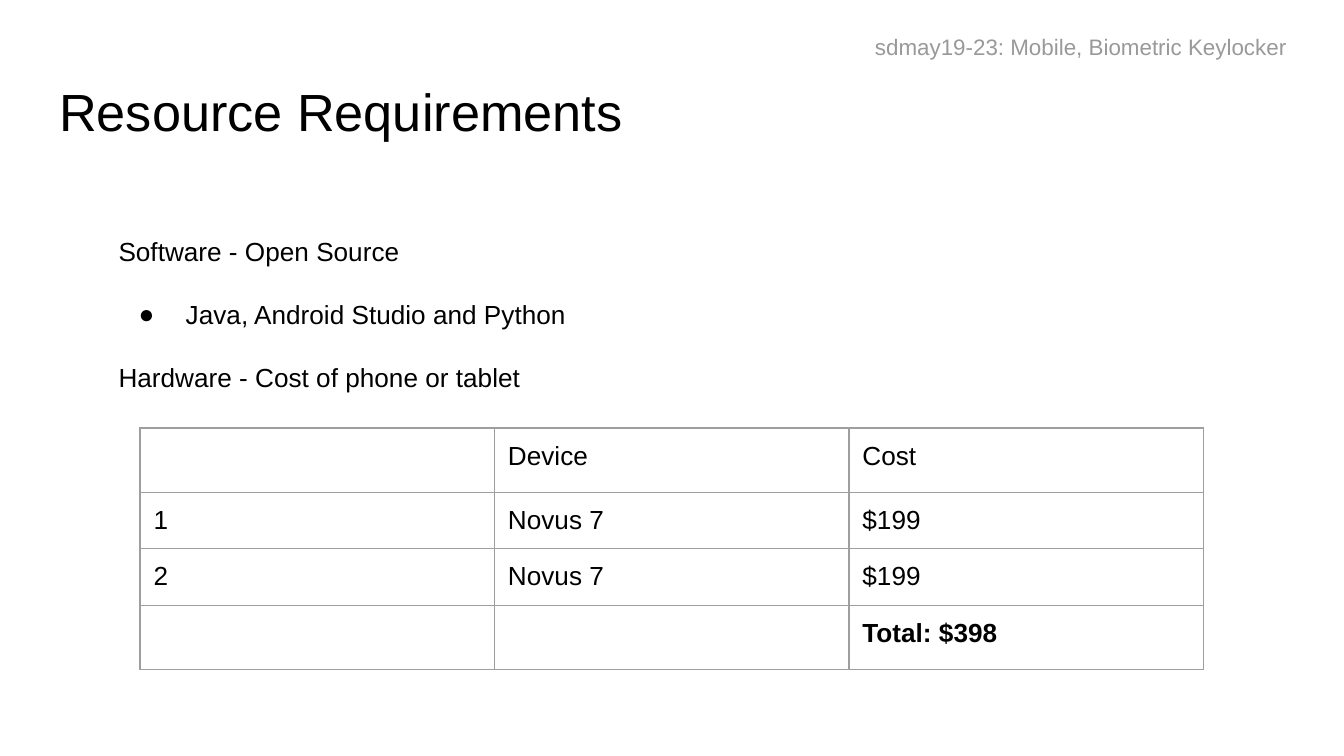
from lxml.etree import SubElement as Sub
from pptx import Presentation
from pptx.dml.color import RGBColor
from pptx.enum.text import MSO_ANCHOR as Anchor, MSO_AUTO_SIZE as Fit, PP_ALIGN as Align
from pptx.oxml.ns import qn
from pptx.util import Inches, Pt

WIDE = Inches(10)
HIGH = WIDE * 9 // 16
PAD = Inches(0.1)
INK, GREY, RULE = "000000", "999999", "9E9E9E"

LINES = [
    ("Software - Open Source", False),
    ("Java, Android Studio and Python", True),
    ("Hardware - Cost of phone or tablet", False),
]
COSTS = [
    ("", "Device", "Cost"),
    ("1", "Novus 7", "$199"),
    ("2", "Novus 7", "$199"),
    ("", "", "Total: $398"),
]
ROWS = [0.48, 0.42, 0.42, 0.48]


def color(code):
    return RGBColor.from_string(code)


def area(left, top, width, height):
    """Turn percentages of the slide into lengths."""
    return (int(WIDE * left / 100), int(HIGH * top / 100),
            int(WIDE * width / 100), int(HIGH * height / 100))


def place(shape, box):
    shape.left, shape.top, shape.width, shape.height = box


def style(para, size, code=INK, bold=False):
    para.alignment = Align.LEFT
    for font in [para.font] + [run.font for run in para.runs]:
        font.name, font.size, font.bold = "Arial", Pt(size), bold
        font.color.rgb = color(code)


def set_frame(frame, top=0.1):
    frame.word_wrap = True
    frame.auto_size = Fit.NONE
    frame.vertical_anchor = Anchor.TOP
    frame.margin_left = frame.margin_right = frame.margin_bottom = PAD
    frame.margin_top = Inches(top)


def set_bullet(para, on):
    props = para._p.get_or_add_pPr()
    props.set("marL", str(Inches(0.5 if on else 0)))
    props.set("indent", str(Inches(-0.35 if on else 0)))
    if on:
        tint = Sub(props, qn("a:buClr"))
        Sub(tint, qn("a:srgbClr"), val=INK)
        Sub(props, qn("a:buChar"), char="●")
    else:
        Sub(props, qn("a:buNone"))


def add_title(slide, box):
    title = slide.shapes.title
    place(title, box)
    set_frame(title.text_frame)
    title.text_frame.text = "Resource Requirements"
    style(title.text_frame.paragraphs[0], 28)


def add_header(slide, box):
    frame = slide.shapes.add_textbox(*box).text_frame
    set_frame(frame)
    frame.text = "sdmay19-23: Mobile, Biometric Keylocker"
    style(frame.paragraphs[0], 12, GREY)


def add_body(slide, box):
    body = slide.placeholders[1]
    place(body, box)
    frame = body.text_frame
    set_frame(frame, 0.33)
    frame.text = "\n".join(text for text, _ in LINES)
    for i, (para, (_, on)) in enumerate(zip(frame.paragraphs, LINES)):
        set_bullet(para, on)
        para.space_before = Pt(17 if i else 0)
        style(para, 14)


def add_rules(cell):
    props = cell._tc.get_or_add_tcPr()
    for side in ("lnL", "lnR", "lnT", "lnB"):
        line = Sub(props, qn("a:" + side), w=str(Pt(0.75)))
        fill = Sub(line, qn("a:solidFill"))
        Sub(fill, qn("a:srgbClr"), val=RULE)


def add_costs(slide, box):
    count = len(COSTS[0])
    table = slide.shapes.add_table(len(COSTS), count, *box).table
    table.first_row = table.horz_banding = False
    for col in table.columns:
        col.width = box[2] // count
    for row, share, texts in zip(table.rows, ROWS, COSTS):
        row.height = int(box[3] * share / sum(ROWS))
        for cell, text in zip(row.cells, texts):
            add_rules(cell)
            cell.fill.background()
            cell.margin_left = cell.margin_right = PAD
            cell.margin_top = cell.margin_bottom = PAD
            cell.text = text
            style(cell.text_frame.paragraphs[0], 14, bold=text.startswith("Total"))


def main():
    deck = Presentation()
    deck.slide_width, deck.slide_height = WIDE, HIGH
    slide = deck.slides.add_slide(deck.slide_layouts[1])
    add_title(slide, area(3.41, 8.65, 93.2, 11.2))
    add_body(slide, area(7.82, 25.25, 84.3, 59.2))
    add_header(slide, area(64.12, 2.67, 34.5, 7.64))
    add_costs(slide, area(10.42, 56.6, 79.13, 32))
    deck.save("out.pptx")


if __name__ == "__main__":
    main()
